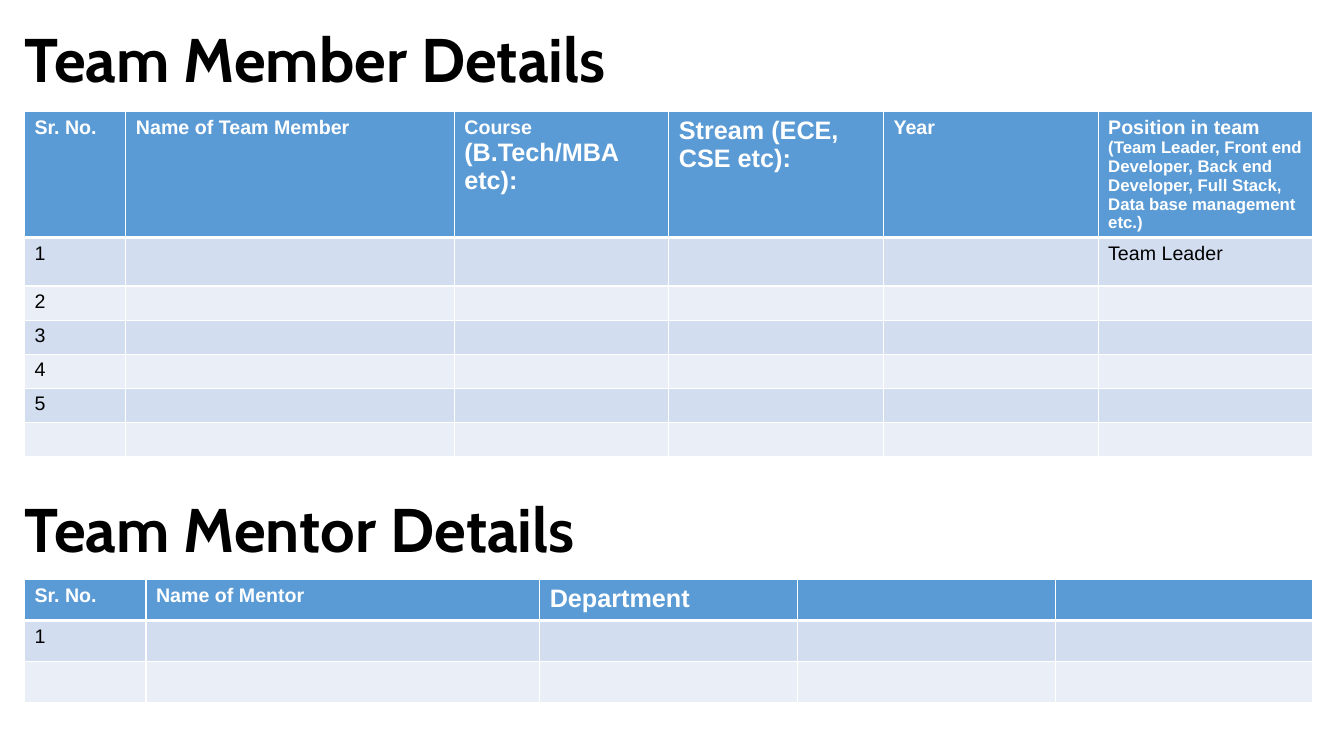
from dataclasses import dataclass

from lxml import etree
from pptx import Presentation
from pptx import util as u
from pptx.dml import color
from pptx.enum import text
from pptx.oxml import ns


@dataclass(frozen=True)
class Theme:
    heading_font: str = "Cabin"
    table_font: str = "Arial"
    ink: str = "000000"
    white: str = "FFFFFF"
    header: str = "5B9BD5"
    bands: tuple = ("D2DEEF", "EAEFF7")
    heading: int = 44
    large: int = 18
    normal: int = 14
    small: int = 12
    thin: int = 1
    thick: int = 3


def apply(target, values):
    for name, value in values.items():
        setattr(target, name, value)


class SlideBuilder:
    def __init__(self, slide, theme):
        self.slide = slide
        self.theme = theme

    def span(self, para, words, size, font, ink, bold):
        span = para.add_run()
        span.text = words
        apply(span.font, {"name": font, "size": u.Pt(size), "bold": bold})
        span.font.color.rgb = color.RGBColor.from_string(ink)

    def heading(self, box, words, left, top, width, height):
        apply(box, {"left": u.Pt(left), "top": u.Pt(top),
                    "width": u.Pt(width), "height": u.Pt(height)})
        frame = box.text_frame
        apply(frame, {"margin_left": 0, "margin_top": 0, "margin_right": 0,
                      "margin_bottom": 0, "word_wrap": True,
                      "auto_size": text.MSO_AUTO_SIZE.NONE,
                      "vertical_anchor": text.MSO_ANCHOR.BOTTOM})
        para = frame.paragraphs[0]
        apply(para, {"alignment": text.PP_ALIGN.LEFT, "line_spacing": 0.9})
        self.span(para, words, self.theme.heading, self.theme.heading_font,
                  self.theme.ink, True)

    def title(self, words, *place):
        self.heading(self.slide.shapes.title, words, *place)

    def subheading(self, words, *place):
        box = self.slide.shapes.add_textbox(0, 0, 0, 0)
        self.heading(box, words, *place)

    def borders(self, cell, row):
        widths = {"lnL": self.theme.thin, "lnR": self.theme.thin,
                  "lnT": self.theme.thick if row == 1 else self.theme.thin,
                  "lnB": self.theme.thick if row == 0 else self.theme.thin}
        properties = cell._tc.get_or_add_tcPr()
        for index, (side, width) in enumerate(widths.items()):
            line = etree.Element(ns.qn(f"a:{side}"), w=str(u.Pt(width)))
            fill = etree.SubElement(line, ns.qn("a:solidFill"))
            etree.SubElement(fill, ns.qn("a:srgbClr"), val=self.theme.white)
            properties.insert(index, line)

    def cell(self, cell, row, spans):
        is_header = row == 0
        shade = self.theme.header if is_header else self.theme.bands[(row - 1) % 2]
        cell.fill.solid()
        cell.fill.fore_color.rgb = color.RGBColor.from_string(shade)
        self.borders(cell, row)
        para = cell.text_frame.paragraphs[0]
        ink = self.theme.white if is_header else self.theme.ink
        for words, size in spans:
            self.span(para, words, size, self.theme.table_font, ink, is_header)
        if not spans:
            etree.SubElement(para._p, ns.qn("a:endParaRPr"),
                             sz=str(self.theme.normal * 100))

    def table(self, left, top, widths, heights, content):
        table = self.slide.shapes.add_table(
            len(heights), len(widths), u.Pt(left), u.Pt(top),
            u.Pt(sum(widths)), u.Pt(sum(heights))).table
        for column, width in zip(table.columns, widths):
            column.width = u.Pt(width)
        for row, height in enumerate(heights):
            table.rows[row].height = u.Pt(height)
            for column in range(len(widths)):
                self.cell(table.cell(row, column), row,
                          content.get((row, column), []))


def main():
    deck = Presentation()
    apply(deck, {"slide_width": u.Pt(960), "slide_height": u.Pt(540)})
    theme = Theme()
    page = SlideBuilder(deck.slides.add_slide(deck.slide_layouts[5]), theme)

    left, heading_width, heading_height = 17.5, 521.5, 48.5
    serial = [("Sr. No.", theme.normal)]

    page.title("Team Member Details", left, 20, heading_width, heading_height)
    members = {
        (0, 0): serial,
        (0, 1): [("Name of Team Member", theme.normal)],
        (0, 2): [("Course ", theme.normal), ("(B.Tech/MBA etc):", theme.large)],
        (0, 3): [("Stream (ECE, CSE etc):", theme.large)],
        (0, 4): [("Year", theme.normal)],
        (0, 5): [("Position in team ", theme.normal),
                 ("(Team Leader, Front end Developer, Back end Developer, "
                  "Full Stack, Data base management etc.)", theme.small)],
        (1, 5): [("Team Leader", theme.normal)],
    }
    members.update({(number, 0): [(str(number), theme.normal)]
                    for number in range(1, 6)})
    page.table(left, 79.5, [72.4, 234.6] + [153.3] * 4,
               [89.5, 34.7] + [24.3] * 5, members)

    page.subheading("Team Mentor Details", left, 355.5, heading_width, heading_height)
    mentors = {
        (0, 0): serial,
        (0, 1): [("Name of Mentor", theme.normal)],
        (0, 2): [("Department", theme.large)],
        (1, 0): [("1", theme.normal)],
    }
    page.table(left, 414, [86.8, 281.2] + [184.1] * 3, [29.2] * 3, mentors)

    deck.save("out.pptx")


if __name__ == "__main__":
    main()
